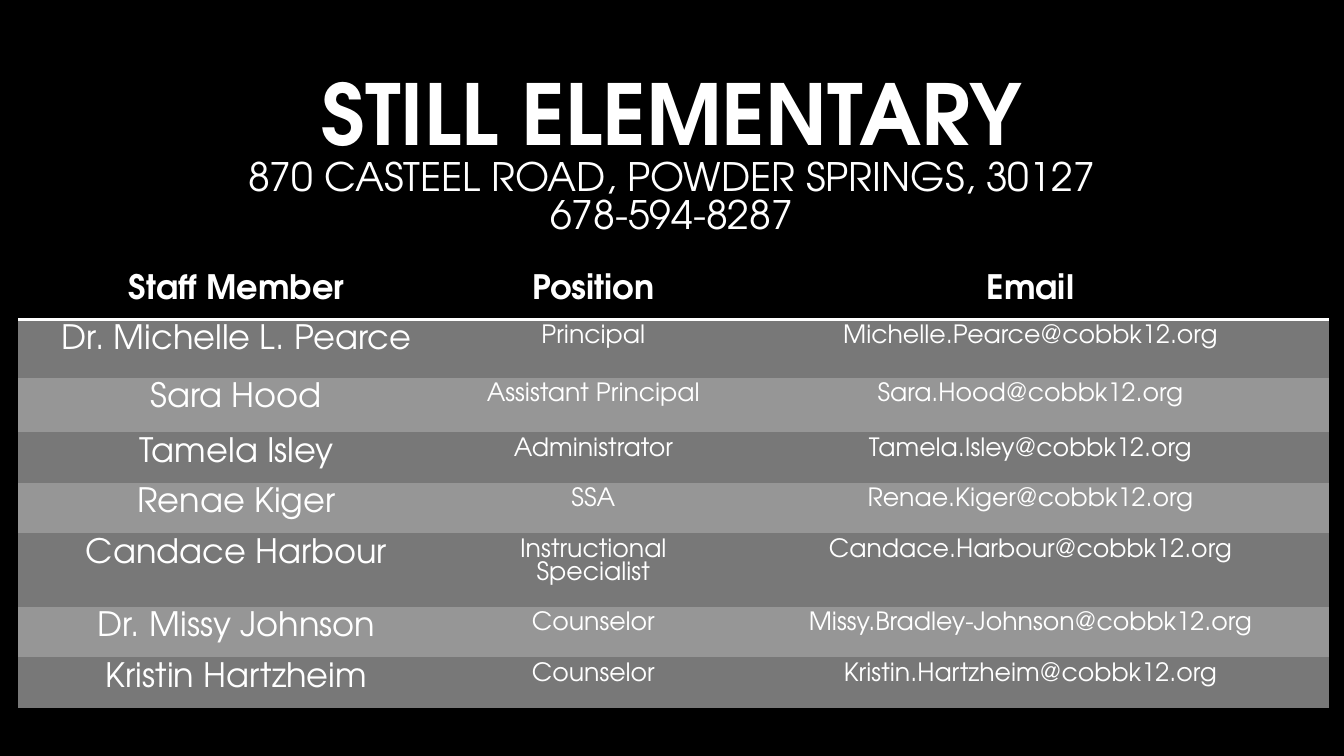
from lxml import etree
from pptx import Presentation
from pptx.dml.color import RGBColor
from pptx.enum.text import MSO_ANCHOR as Anchor, PP_ALIGN as Align
from pptx.oxml import parse_xml
from pptx.oxml.ns import nsdecls, qn
from pptx.util import Inches, Pt

BLACK = RGBColor(0x00, 0x00, 0x00)
WHITE = RGBColor(0xFF, 0xFF, 0xFF)
DARK_GRAY = RGBColor(0x78, 0x78, 0x78)
LIGHT_GRAY = RGBColor(0x96, 0x96, 0x96)
NO_STYLE = "{2D5ABB26-0587-4C30-8999-92F81FD0307C}"

TITLE = "STILL ELEMENTARY\v870 CASTEEL ROAD, POWDER SPRINGS, 30127\v678-594-8287"
STAFF = [
    ("Staff Member", "Position", "Email"),
    ("Dr. Michelle L. Pearce", "Principal", "Michelle.Pearce@cobbk12.org"),
    ("Sara Hood", "Assistant Principal", "Sara.Hood@cobbk12.org"),
    ("Tamela Isley", "Administrator", "Tamela.Isley@cobbk12.org"),
    ("Renae Kiger", "SSA", "Renae.Kiger@cobbk12.org"),
    ("Candace Harbour", "Instructional Specialist", "Candace.Harbour@cobbk12.org"),
    ("Dr. Missy Johnson", "Counselor", "Missy.Bradley-Johnson@cobbk12.org"),
    ("Kristin Hartzheim", "Counselor", "Kristin.Hartzheim@cobbk12.org"),
]
COLUMN_WIDTHS = [4.33, 2.75, 5.92]
ROW_HEIGHTS = [0.47, 0.58, 0.54, 0.47, 0.47, 0.73, 0.47, 0.47]


class SlideBuilder:
    font = "TeX Gyre Adventor"
    color = WHITE

    def __init__(self, prs):
        self.s = prs.slides.add_slide(prs.slide_layouts[6])
        self.s.background.fill.solid()
        self.s.background.fill.fore_color.rgb = BLACK

    def style_run(self, r, size, bold):
        r.font.name = self.font
        r.font.size = Pt(size)
        r.font.bold = bold
        r.font.color.rgb = self.color

    def title(self, text, left, top, width, height):
        sp = self.s.shapes.add_textbox(Inches(left), Inches(top), Inches(width), Inches(height))
        tf = sp.text_frame
        tf.word_wrap = True
        tf.vertical_anchor = Anchor.BOTTOM
        tf.margin_left = tf.margin_right = Inches(0.13)
        tf.margin_top = tf.margin_bottom = Inches(0.07)
        p = tf.paragraphs[0]
        p.text = text
        p.alignment = Align.CENTER
        p.line_spacing = 0.8
        for i, r in enumerate(p.runs):
            self.style_run(r, 28 if i else 60, i == 0)

    def cell(self, cell, text, size, bold, fill):
        cell.fill.solid()
        cell.fill.fore_color.rgb = fill
        p = cell.text_frame.paragraphs[0]
        p.text = text
        p.alignment = Align.CENTER
        self.style_run(p.runs[0], size, bold)

    def bottom_border(self, cell, width):
        line = parse_xml(f'<a:lnB {nsdecls("a")} w="{Pt(width)}"/>')
        fill = etree.SubElement(line, qn("a:solidFill"))
        etree.SubElement(fill, qn("a:srgbClr"), val=str(self.color))
        cell._tc.get_or_add_tcPr().insert(0, line)

    def table(self, rows, widths, heights, left, top):
        frame = self.s.shapes.add_table(
            len(rows), len(widths), Inches(left), Inches(top),
            Inches(sum(widths)), Inches(sum(heights)))
        table = frame.table
        table._tbl.tblPr.find(qn("a:tableStyleId")).text = NO_STYLE
        for column, width in zip(table.columns, widths):
            column.width = Inches(width)
        for i, (values, height) in enumerate(zip(rows, heights)):
            table.rows[i].height = Inches(height)
            header = i == 0
            fill = BLACK if header else DARK_GRAY if i % 2 else LIGHT_GRAY
            for j, text in enumerate(values):
                cell = table.cell(i, j)
                self.cell(cell, text, 24 if header or j == 0 else 18, header, fill)
                if header:
                    self.bottom_border(cell, 2)


def main():
    prs = Presentation()
    prs.slide_width = Inches(13.33)
    prs.slide_height = Inches(7.5)
    slide = SlideBuilder(prs)
    slide.title(TITLE, 0.16, 0.67, 13, 1.75)
    slide.table(STAFF, COLUMN_WIDTHS, ROW_HEIGHTS, 0.18, 2.67)
    prs.save("out.pptx")


if __name__ == "__main__":
    main()
